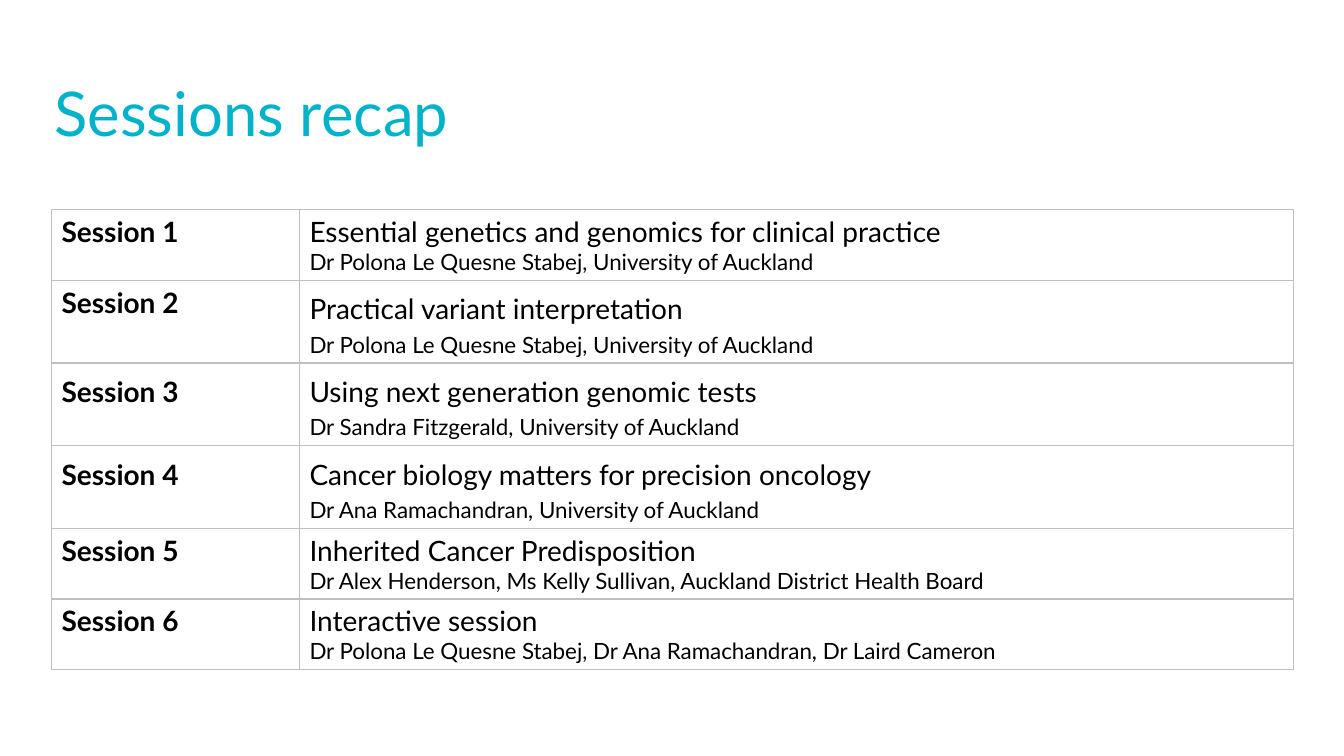
from lxml import etree
from pptx import Presentation
from pptx.dml.color import RGBColor
from pptx.enum.text import MSO_ANCHOR, PP_ALIGN
from pptx.oxml.ns import qn
from pptx.util import Inches, Pt

MIDDLE = MSO_ANCHOR.MIDDLE
LEFT, JUSTIFY = PP_ALIGN.LEFT, PP_ALIGN.JUSTIFY

# Topic, speakers, then alignment and line spacing of the label and of the details
SESSIONS = [
    ("Essential genetics and genomics for clinical practice",
     "Dr Polona Le Quesne Stabej, University of Auckland",
     (JUSTIFY, 1.0), (LEFT, 1.0)),
    ("Practical variant interpretation",
     "Dr Polona Le Quesne Stabej, University of Auckland",
     (JUSTIFY, 1.0), (LEFT, 1.2)),
    ("Using next generation genomic tests",
     "Dr Sandra Fitzgerald, University of Auckland",
     (JUSTIFY, 1.2), (JUSTIFY, 1.2)),
    ("Cancer biology matters for precision oncology",
     "Dr Ana Ramachandran, University of Auckland",
     (JUSTIFY, 1.2), (JUSTIFY, 1.2)),
    ("Inherited Cancer Predisposition",
     "Dr Alex Henderson, Ms Kelly Sullivan, Auckland District Health Board",
     (LEFT, 1.0), (LEFT, 1.0)),
    ("Interactive session",
     "Dr Polona Le Quesne Stabej, Dr Ana Ramachandran, Dr Laird Cameron",
     (LEFT, 1.0), (LEFT, 1.0)),
]


def color(hex_code):
    return RGBColor.from_string(hex_code)


class RecapSlide:
    FONT = "Lato"
    ACCENT, INK, RULE = "00B2CA", "000000", "BFBFBF"
    TITLE_SIZE, TOPIC_SIZE, SPEAKER_SIZE = 44, 20, 16
    LINE_HEIGHT = 1.2
    CELL_PADDING = 7.2

    def __init__(self, deck):
        self.width, self.height = deck.slide_width, deck.slide_height
        self.slide = deck.slides.add_slide(deck.slide_layouts[6])

    def across(self, percent):
        return round(self.width * percent / 100)

    def down(self, percent):
        return round(self.height * percent / 100)

    def add_text(self, paragraph, text, size, ink, bold=False, layout=(LEFT, 1.0)):
        paragraph.alignment, paragraph.line_spacing = layout
        run = paragraph.add_run()
        run.text = text
        run.font.name = self.FONT
        run.font.size = Pt(size)
        run.font.bold = bold
        run.font.color.rgb = color(ink)

    def title(self, text, left, top, width, height):
        box = self.slide.shapes.add_textbox(
            self.across(left), self.down(top), self.across(width), self.down(height))
        frame = box.text_frame
        frame.word_wrap = True
        frame.vertical_anchor = MIDDLE
        self.add_text(frame.paragraphs[0], text, self.TITLE_SIZE, self.ACCENT,
                      layout=(LEFT, 0.9))

    def outline(self, cell):
        properties = cell._tc.get_or_add_tcPr()
        for side in ("a:lnL", "a:lnR", "a:lnT", "a:lnB"):
            line = etree.SubElement(properties, qn(side), w=str(Pt(1)))
            fill = etree.SubElement(line, qn("a:solidFill"))
            etree.SubElement(fill, qn("a:srgbClr"), val=self.RULE)
        cell.fill.background()

    def row_height(self, spacing):
        """Height that just holds the topic line and the speaker line."""
        lines = (self.TOPIC_SIZE + self.SPEAKER_SIZE) * self.LINE_HEIGHT * spacing
        return Pt(lines + self.CELL_PADDING)

    def session_table(self, sessions, left, top, column_widths):
        heights = [self.row_height(details[1]) for *_, details in sessions]
        table = self.slide.shapes.add_table(
            len(sessions), len(column_widths), self.across(left), self.down(top),
            self.across(sum(column_widths)), sum(heights)).table
        table.first_row = table.horz_banding = False
        for column, width in zip(table.columns, column_widths):
            column.width = self.across(width)
        for number, (session, row, height) in enumerate(
                zip(sessions, table.rows, heights), start=1):
            topic, speakers, label_layout, details_layout = session
            row.height = height
            label_cell, details_cell = row.cells
            self.outline(label_cell)
            self.outline(details_cell)
            self.add_text(label_cell.text_frame.paragraphs[0], f"Session {number}",
                          self.TOPIC_SIZE, self.INK, True, label_layout)
            details = details_cell.text_frame
            self.add_text(details.paragraphs[0], topic,
                          self.TOPIC_SIZE, self.INK, layout=details_layout)
            self.add_text(details.add_paragraph(), speakers,
                          self.SPEAKER_SIZE, self.INK, layout=details_layout)


def main():
    deck = Presentation()
    deck.slide_width, deck.slide_height = Inches(13.33), Inches(7.5)
    recap = RecapSlide(deck)
    recap.session_table(SESSIONS, left=3.83, top=27.73, column_widths=(18.45, 73.97))
    recap.title("Sessions recap", left=3.3, top=5.73, width=86.27, height=19.33)
    deck.save("out.pptx")


if __name__ == "__main__":
    main()
